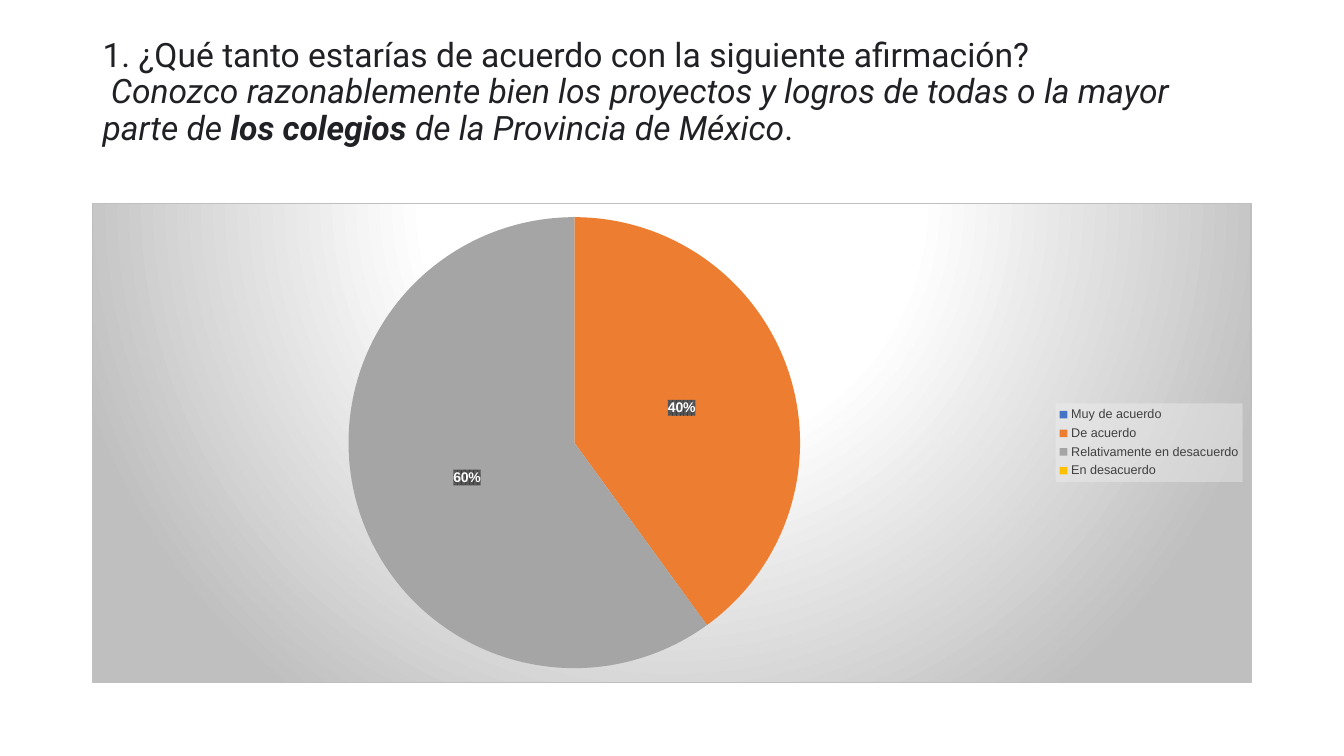
from lxml.etree import SubElement
from pptx import Presentation
from pptx.chart.data import CategoryChartData
from pptx.dml.color import RGBColor
from pptx.enum.chart import XL_CHART_TYPE, XL_LABEL_POSITION, XL_LEGEND_POSITION
from pptx.enum.text import MSO_ANCHOR, MSO_AUTO_SIZE, PP_ALIGN
from pptx.oxml import parse_xml
from pptx.oxml.ns import nsdecls, qn
from pptx.util import Cm, Pt


def color(code):
    return RGBColor.from_string(code)


def style(font, code, **form):
    font.color.rgb = color(code)
    for key, value in form.items():
        setattr(font, key, value)


deck = Presentation()
deck.slide_width, deck.slide_height = Cm(33.87), Cm(19.05)
slide = deck.slides.add_slide(deck.slide_layouts[5])

title = slide.shapes.title
place = {"left": Cm(2.33), "top": Cm(1.01), "width": Cm(29.21), "height": Cm(3.68)}
for key, value in place.items():
    setattr(title, key, value)
frame = title.text_frame
setup = {"word_wrap": True, "auto_size": MSO_AUTO_SIZE.NONE,
         "vertical_anchor": MSO_ANCHOR.MIDDLE}
for key, value in setup.items():
    setattr(frame, key, value)
para = frame.paragraphs[0]
para.alignment, para.line_spacing = PP_ALIGN.LEFT, 0.9

parts = [
    ("1. ¿Qué tanto estarías de acuerdo con la siguiente afirmación?", False, False, True),
    (" ", False, False, False),
    ("Conozco razonablemente bien los proyectos y logros de todas o la mayor parte de ",
     False, True, False),
    ("los colegios ", True, True, False),
    ("de la Provincia de México", False, True, False),
    (". ", False, False, True),
]
for text, bold, slant, last in parts:
    run = para.add_run()
    run.text = text
    style(run.font, "202124", name="Roboto", size=Pt(24), bold=bold, italic=slant)
    if last:
        para.add_line_break()
style(para.font, "202124", name="Roboto", size=Pt(24))
tail = SubElement(para._p, qn("a:endParaRPr"))
tail.set("sz", "2400")

data = CategoryChartData()
data.categories = ["Muy de acuerdo", "De acuerdo", "Relativamente en desacuerdo",
                   "En desacuerdo"]
data.add_series("Series 1", (0, 40, 60, 0))
chart = slide.shapes.add_chart(XL_CHART_TYPE.PIE, Cm(2.33), Cm(5.11), Cm(29.21),
                               Cm(12.09), data).chart
chart.has_title = False
style(chart.font, "000000", name="Arial", size=Pt(10))

chart.has_legend = True
legend = chart.legend
legend.position = XL_LEGEND_POSITION.RIGHT
legend.include_in_layout = False
style(legend.font, "404040", name="Arial", size=Pt(9))

plot = chart.plots[0]
plot.vary_by_categories = True
pie = plot.series[0]
for spot, code in enumerate(["4472C4", "ED7D31", "A5A5A5", "FFC000"]):
    fill = pie.points[spot].format.fill
    fill.solid()
    fill.fore_color.rgb = color(code)

labels = pie.data_labels
look = {"show_percentage": True, "show_value": False, "number_format": "0%",
        "number_format_is_linked": False, "position": XL_LABEL_POSITION.CENTER}
for key, value in look.items():
    setattr(labels, key, value)
style(labels.font, "FFFFFF", name="Arial", size=Pt(10), bold=True)

names = nsdecls("c", "a")
node = labels._element
for rank, spot in enumerate((0, 3)):
    node.insert(rank, parse_xml(
        f'<c:dLbl {names}><c:idx val="{spot}"/><c:delete val="1"/></c:dLbl>'))

panel = ('<a:gradFill><a:gsLst><a:gs pos="0"><a:srgbClr val="FFFFFF"/></a:gs>'
         '<a:gs pos="39000"><a:srgbClr val="FFFFFF"/></a:gs>'
         '<a:gs pos="100000"><a:srgbClr val="BFBFBF"/></a:gs></a:gsLst>'
         '<a:path path="circle"><a:fillToRect l="50000" t="-80000" r="50000" b="180000"/>'
         '</a:path></a:gradFill><a:ln w="9525"><a:solidFill><a:srgbClr val="BFBFBF"/>'
         '</a:solidFill></a:ln>')
veil = '<a:solidFill><a:srgbClr val="F2F2F2"><a:alpha val="39000"/></a:srgbClr></a:solidFill>'
hatch = ('<a:pattFill prst="pct75"><a:fgClr><a:srgbClr val="404040"/></a:fgClr>'
         '<a:bgClr><a:srgbClr val="595959"/></a:bgClr></a:pattFill>')
for owner, paint in ((chart._chartSpace, panel), (legend._element, veil), (node, hatch)):
    owner.find(qn("c:txPr")).addprevious(
        parse_xml(f"<c:spPr {names}>{paint}</c:spPr>"))

deck.save("out.pptx")
